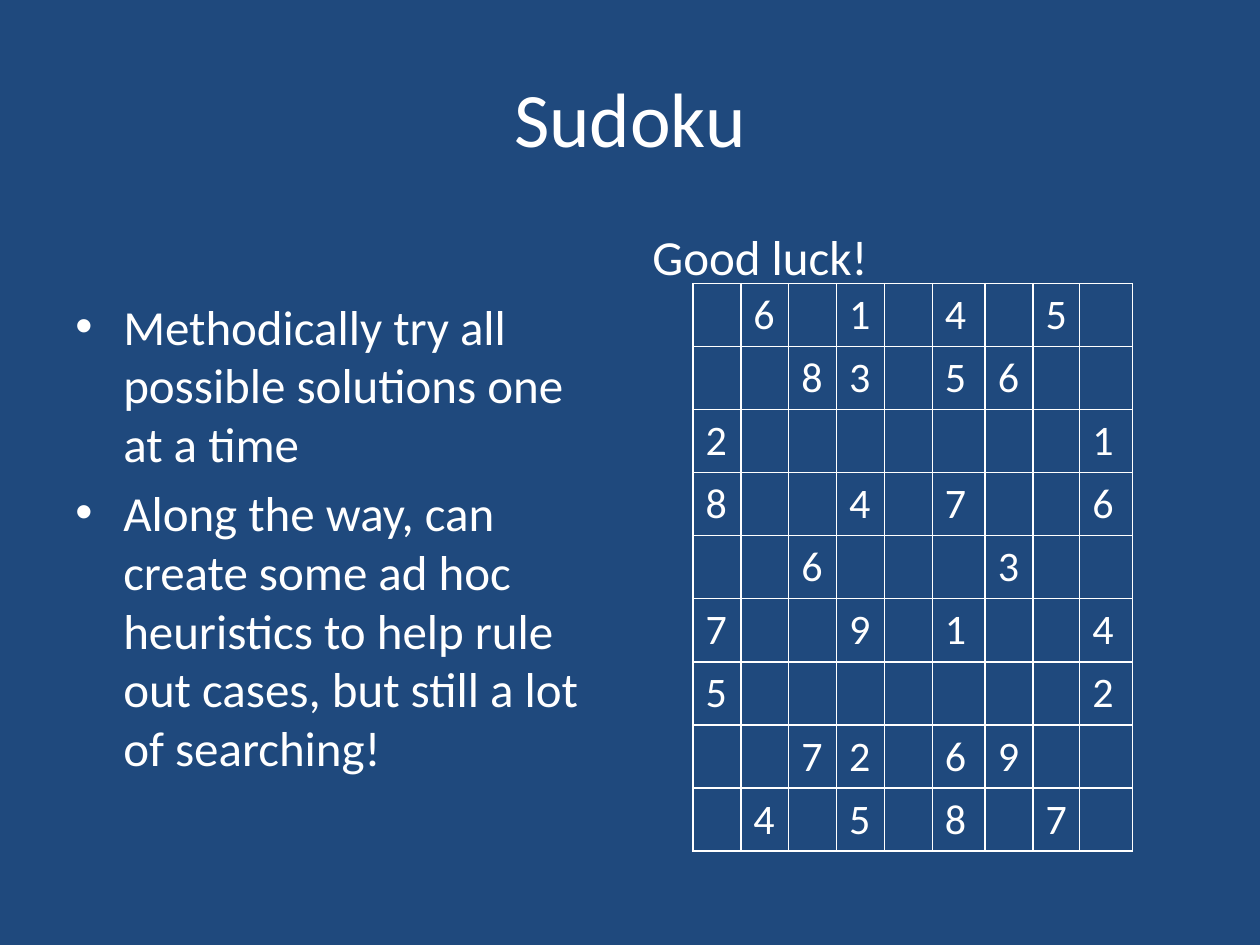
"""Build the Sudoku slide: a title, two notes and a puzzle grid."""
from lxml.etree import SubElement
from pptx import Presentation
from pptx.dml.color import RGBColor
from pptx.enum.text import MSO_ANCHOR, PP_ALIGN
from pptx.oxml.ns import qn
from pptx.util import Inches, Pt

TITLE = "Sudoku"
NOTES = [
    "Methodically try all possible solutions one at a time",
    "Along the way, can create some ad hoc heuristics to help rule out cases, "
    "but still a lot of searching!",
]
WISH = ["Good luck!"]
PUZZLE = [
    ".6.1.4.5.",
    "..83.56..",
    "2.......1",
    "8..4.7..6",
    "..6...3..",
    "7..9.1..4",
    "5.......2",
    "..72.69..",
    ".4.5.8.7.",
]
COLS = [0.38, 0.38, 0.38, 0.38, 0.38, 0.42, 0.38, 0.37, 0.42]
ROW = 0.41
THEME = {
    "back": RGBColor(0x1F, 0x49, 0x7D),
    "ink": RGBColor(0xFF, 0xFF, 0xFF),
    "font": "Calibri",
    "title": Pt(44),
    "body": Pt(28),
    "cell": Pt(24),
    "rule": Pt(1),
}


def apply(item, **values):
    for name, value in values.items():
        setattr(item, name, value)


def write(para, text, size):
    run = para.add_run()
    run.text = text
    apply(run.font, name=THEME["font"], size=THEME[size])
    run.font.color.rgb = THEME["ink"]


def place(shape, left, top, width, height):
    apply(shape, left=Inches(left), top=Inches(top),
          width=Inches(width), height=Inches(height))


def add_notes(slide, lines, left, inset=0.05, bullet=None):
    box = slide.shapes.add_textbox(0, 0, 0, 0)
    place(box, left, 1.75, 4.42, 4.95)
    frame = box.text_frame
    apply(frame, word_wrap=True, margin_top=Inches(inset))
    for i, line in enumerate(lines):
        para = frame.add_paragraph() if i else frame.paragraphs[0]
        para.space_before = Pt(5.6)
        write(para, line, "body")
        if bullet:
            props = para._p.get_or_add_pPr()
            props.set("marL", str(Inches(0.38)))
            props.set("indent", str(Inches(-0.38)))
            SubElement(props, qn("a:buFont"), typeface="Arial")
            SubElement(props, qn("a:buChar"), char=bullet)


def frame_cell(cell):
    props = cell._tc.get_or_add_tcPr()
    for side in "LRTB":
        line = SubElement(props, qn("a:ln" + side), w=str(THEME["rule"]))
        fill = SubElement(line, qn("a:solidFill"))
        SubElement(fill, qn("a:srgbClr"), val=str(THEME["ink"]))
    cell.fill.background()


def add_grid(slide):
    count = len(PUZZLE)
    shape = slide.shapes.add_table(
        count, len(COLS), Inches(5.5), Inches(2.25),
        Inches(sum(COLS)), Inches(ROW * count))
    table = shape.table
    apply(table, first_row=False, horz_banding=False)
    for col, width in zip(table.columns, COLS):
        col.width = Inches(width)
    for row, marks in zip(table.rows, PUZZLE):
        row.height = Inches(ROW)
        for cell, mark in zip(row.cells, marks):
            frame_cell(cell)
            if mark != ".":
                write(cell.text_frame.paragraphs[0], mark, "cell")


def main():
    deck = Presentation()
    apply(deck, slide_width=Inches(10), slide_height=Inches(7.5))
    slide = deck.slides.add_slide(deck.slide_layouts[5])
    slide.background.fill.solid()
    slide.background.fill.fore_color.rgb = THEME["back"]
    title = slide.shapes.title
    place(title, 0.5, 0.3, 9, 1.25)
    title.text_frame.vertical_anchor = MSO_ANCHOR.MIDDLE
    head = title.text_frame.paragraphs[0]
    head.alignment = PP_ALIGN.CENTER
    write(head, TITLE, "title")
    add_notes(slide, NOTES, 0.5, inset=0.6, bullet="•")
    add_notes(slide, WISH, 5.08)
    add_grid(slide)
    deck.save("out.pptx")


if __name__ == "__main__":
    main()
